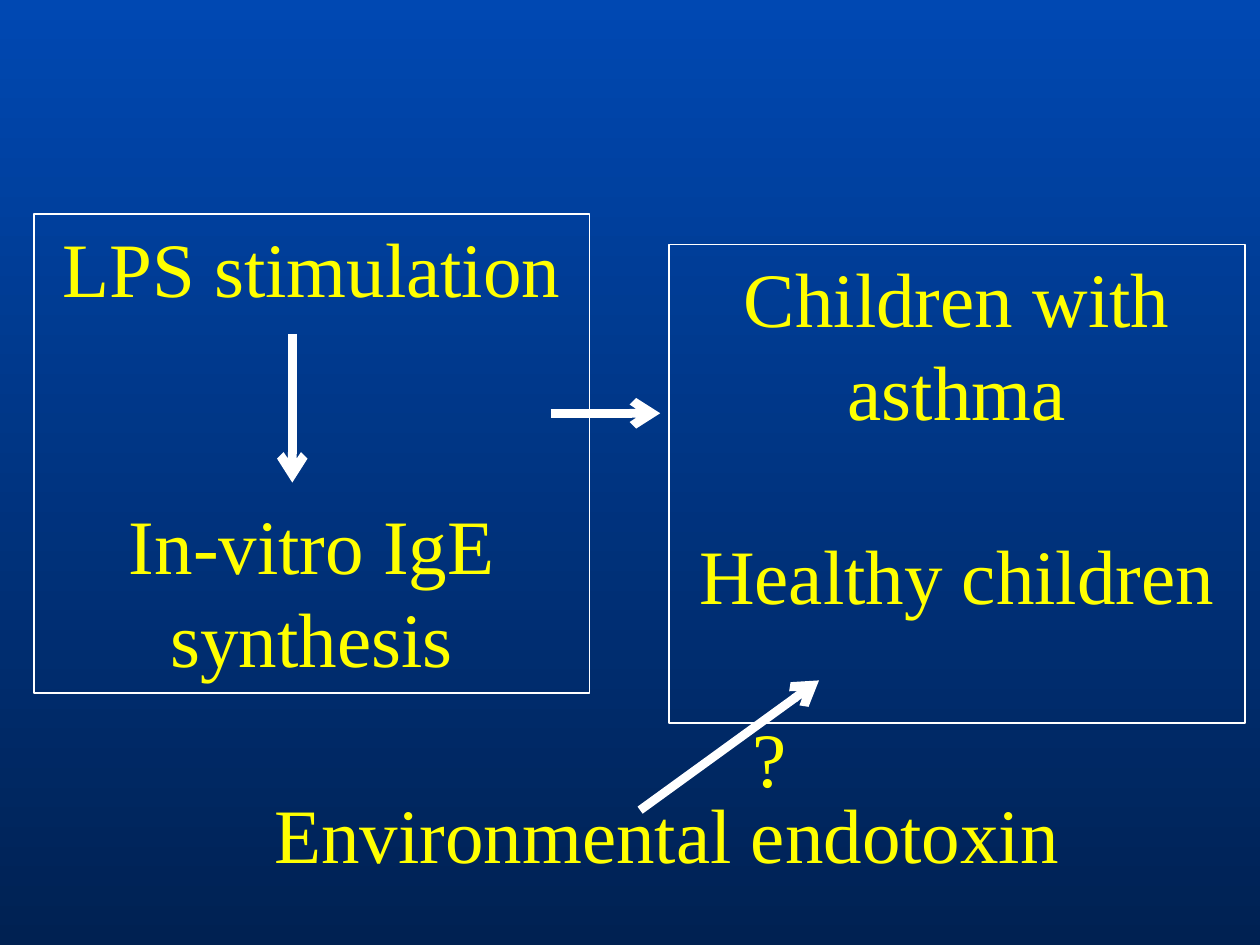
from pptx import Presentation
from pptx.dml.color import RGBColor
from pptx.enum.shapes import MSO_CONNECTOR as Connector, MSO_SHAPE as Shape
from pptx.enum.text import MSO_ANCHOR as Anchor, PP_ALIGN as Align
from pptx.oxml.ns import qn
from pptx.util import Inches, Pt
from lxml.etree import SubElement

COLORS = {"top": "0048B2", "bottom": "002152", "line": "FFFFFF", "text": "FFFF00"}
FONT = "Times New Roman"
LINE_HEIGHT = 52.8


def color(name):
    return RGBColor.from_string(COLORS[name])


def set_background(slide):
    fill = slide.background.fill
    fill.gradient()
    fill.gradient_angle = 270
    for stop, name, position in zip(fill.gradient_stops, ("top", "bottom"), (0, 1)):
        stop.color.rgb = color(name)
        stop.position = position


def write_text(shape, *lines, size=44, gap=0, wrap=True):
    """Write one centred paragraph per line, parted by gap line heights."""
    frame = shape.text_frame
    frame.word_wrap = wrap
    frame.vertical_anchor = Anchor.TOP
    for index, line in enumerate(lines):
        paragraph = frame.add_paragraph() if index else frame.paragraphs[0]
        paragraph.alignment = Align.CENTER
        paragraph.line_spacing = Pt(LINE_HEIGHT)
        if index:
            paragraph.space_before = Pt(gap * LINE_HEIGHT)
        run = paragraph.add_run()
        run.text = line
        run.font.name = FONT
        run.font.size = Pt(size)
        run.font.color.rgb = color("text")


def add_box(slide, left, top, width, height, *lines, gap):
    box = slide.shapes.add_shape(
        Shape.RECTANGLE, Inches(left), Inches(top), Inches(width), Inches(height))
    box.shadow.inherit = False
    box.fill.background()
    box.line.color.rgb = color("line")
    box.line.width = Pt(1)
    write_text(box, *lines, gap=gap)


def add_label(slide, left, top, width, height, text):
    label = slide.shapes.add_textbox(
        Inches(left), Inches(top), Inches(width), Inches(height))
    write_text(label, text, wrap=False)


def add_arrow(slide, start, end):
    arrow = slide.shapes.add_connector(
        Connector.STRAIGHT, *(Inches(value) for value in (*start, *end)))
    arrow.line.color.rgb = color("line")
    arrow.line.width = Pt(5)
    properties = arrow._element.spPr
    SubElement(properties.find(qn("a:ln")), qn("a:tailEnd"), type="arrow")
    SubElement(properties, qn("a:effectLst"))


def main():
    presentation = Presentation()
    presentation.slide_width = Inches(10)
    presentation.slide_height = Inches(7.5)
    slide = presentation.slides.add_slide(presentation.slide_layouts[6])
    set_background(slide)

    add_box(slide, 0.27, 1.7, 4.41, 3.8,
            "LPS stimulation", "In-vitro IgE synthesis", gap=2)
    add_arrow(slide, (2.32, 2.65), (2.32, 3.83))
    add_arrow(slide, (4.37, 3.28), (5.24, 3.28))
    add_box(slide, 5.31, 1.94, 4.57, 3.8,
            "Children with asthma", "Healthy children", gap=1)
    add_label(slide, 2.05, 6.19, 6.49, 0.84, "Environmental endotoxin")
    add_arrow(slide, (5.08, 6.43), (6.5, 5.4))
    add_label(slide, 5.87, 5.59, 0.48, 0.84, "?")

    presentation.save("out.pptx")


if __name__ == "__main__":
    main()
